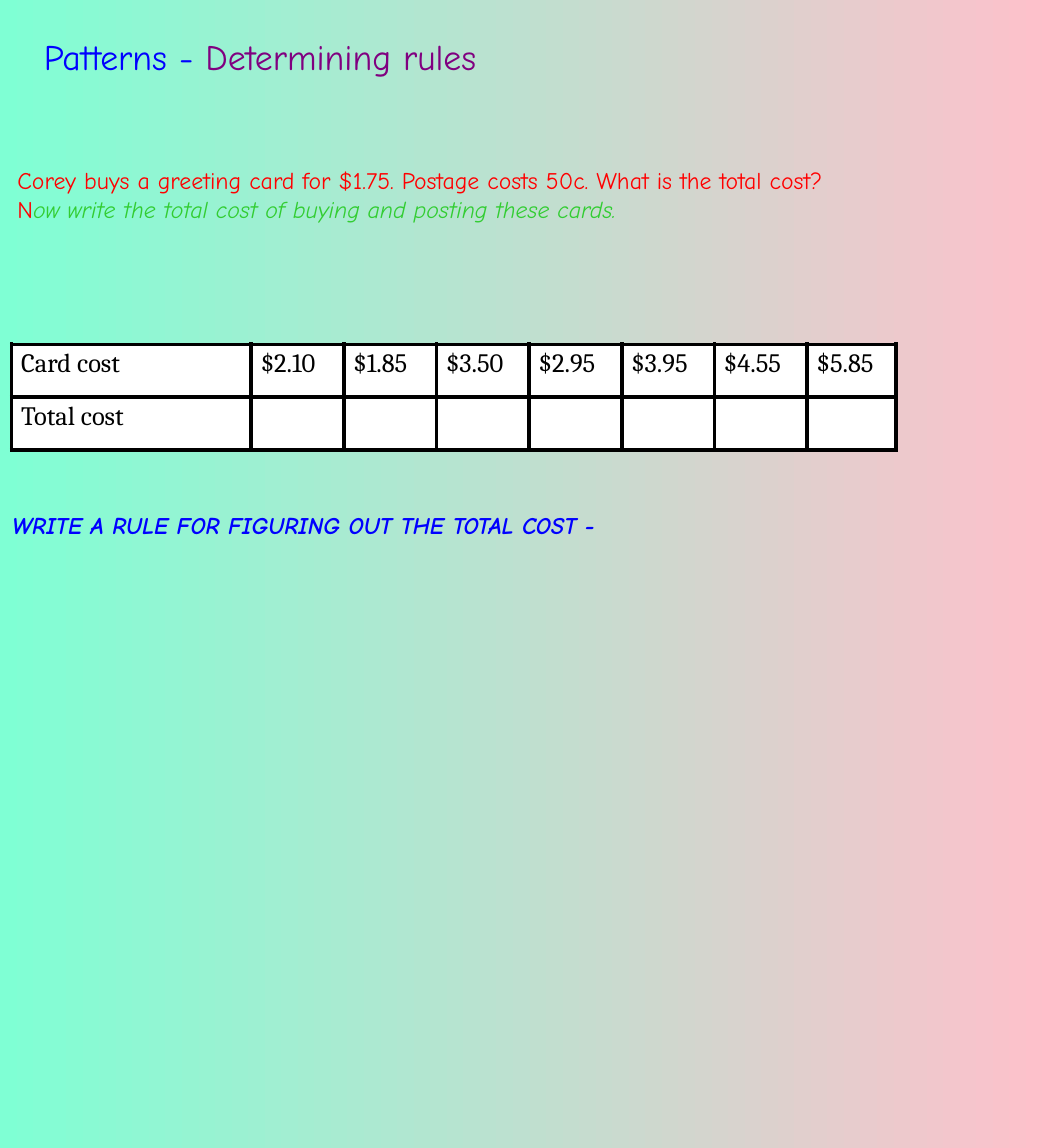
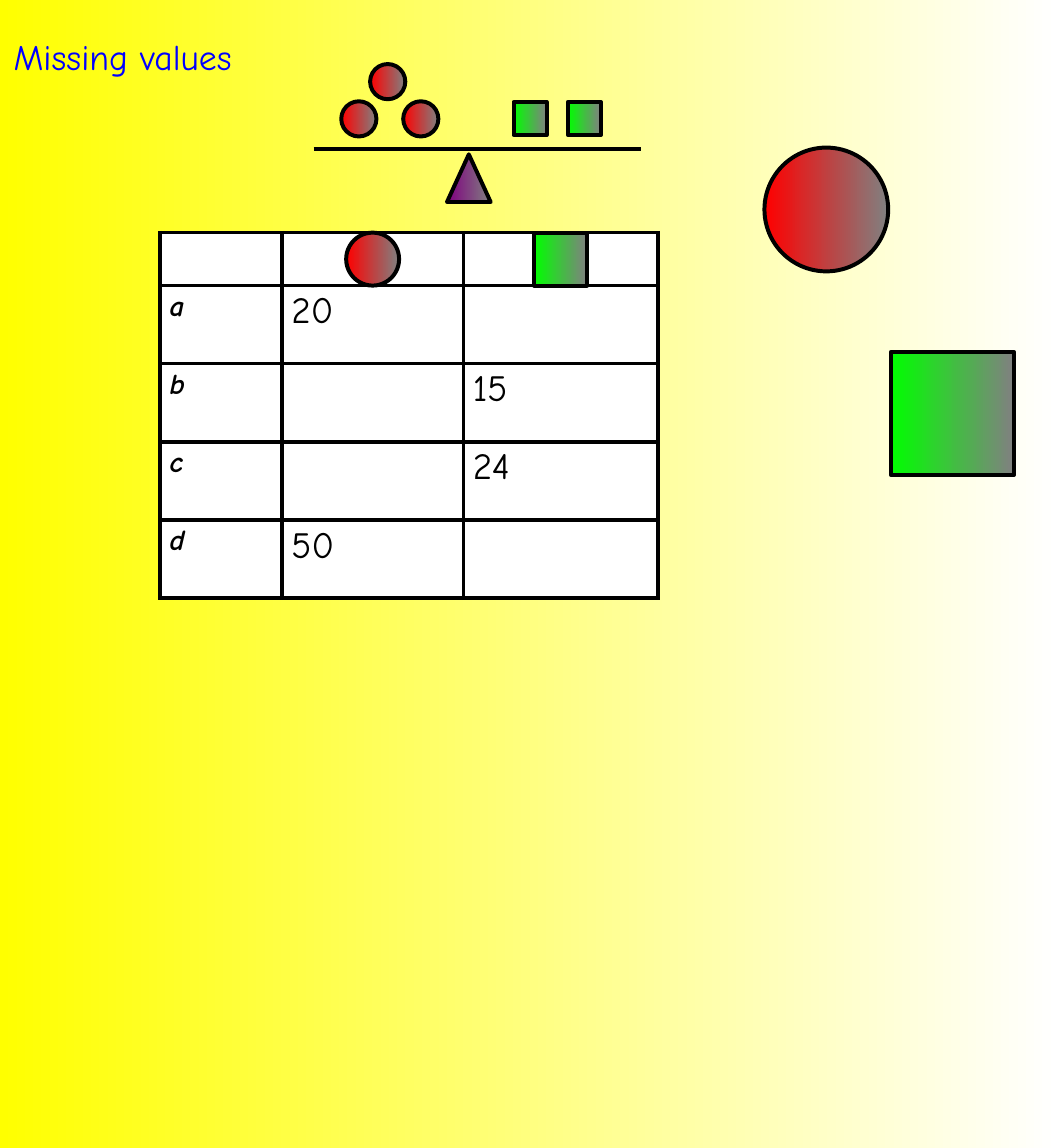
from lxml.etree import SubElement
from pptx import Presentation
from pptx.dml.color import RGBColor
from pptx.enum.shapes import MSO_CONNECTOR, MSO_SHAPE
from pptx.enum.text import MSO_ANCHOR, MSO_AUTO_SIZE, PP_ALIGN
from pptx.oxml.ns import qn
from pptx.util import Pt

BLACK, WHITE, GREY = "000000", "FFFFFF", "808080"
BLUE, PURPLE, RED = "0000FF", "800080", "FF0000"
GREEN, LIME = "32CD32", "00FF00"
COMIC, SERIF = "Comic Neue", "Cambria"
LINE_WIDTH = 3
TITLE_SIZE, BODY_SIZE = 27, 18
CIRCLE = (MSO_SHAPE.OVAL, RED)
SQUARE = (MSO_SHAPE.RECTANGLE, LIME)
PIVOT = (MSO_SHAPE.ISOSCELES_TRIANGLE, PURPLE)


def color(value):
    """Turn a hex string into a colour."""
    return RGBColor.from_string(value)


def fill_gradient(fill, start, end):
    """Fill from left to right between two colours."""
    fill.gradient()
    fill.gradient_angle = 0
    for stop, value in zip(fill.gradient_stops, (start, end)):
        stop.color.rgb = color(value)


def add_run(paragraph, text, size, value, font=COMIC, bold=False, italic=False):
    """Add one formatted run to a paragraph."""
    run = paragraph.add_run()
    run.text = text
    run.font.name, run.font.size = font, Pt(size)
    run.font.bold, run.font.italic = bold, italic
    run.font.color.rgb = color(value)


def add_slide(presentation, background, left, width, title_runs):
    """Add a slide with a gradient background and a title of (text, colour) runs."""
    slide = presentation.slides.add_slide(presentation.slide_layouts[5])
    fill_gradient(slide.background.fill, *background)
    title = slide.shapes.title
    title.left, title.top, title.width, title.height = (
        Pt(value) for value in (left, 23, width, 40))
    frame = title.text_frame
    frame.auto_size = MSO_AUTO_SIZE.NONE
    frame.vertical_anchor = MSO_ANCHOR.TOP
    paragraph = frame.paragraphs[0]
    paragraph.alignment = PP_ALIGN.LEFT
    for text, value in title_runs:
        add_run(paragraph, text, TITLE_SIZE, value)
    return slide


def add_text(slide, left, top, width, height, lines):
    """Add a text box; each line is a list of (text, colour, style) runs."""
    box = slide.shapes.add_textbox(Pt(left), Pt(top), Pt(width), Pt(height))
    frame = box.text_frame
    frame.word_wrap = True
    for index, runs in enumerate(lines):
        paragraph = frame.add_paragraph() if index else frame.paragraphs[0]
        for text, value, style in runs:
            add_run(paragraph, text, BODY_SIZE, value, **style)


def add_borders(cell):
    """Draw a black border on all four sides of a cell."""
    properties = cell._tc.get_or_add_tcPr()
    for side in ("a:lnL", "a:lnR", "a:lnT", "a:lnB"):
        line = SubElement(properties, qn(side), w=str(Pt(LINE_WIDTH)))
        SubElement(SubElement(line, qn("a:solidFill")), qn("a:srgbClr"), val=BLACK)


def add_grid(slide, left, top, columns, rows, texts, style, label_style):
    """Add a white table whose first column has its own text style."""
    table = slide.shapes.add_table(
        len(rows), len(columns), Pt(left), Pt(top), Pt(sum(columns)), Pt(sum(rows))).table
    table.first_row = table.horz_banding = False
    for column, width in zip(table.columns, columns):
        column.width = Pt(width)
    for row, height, row_texts in zip(table.rows, rows, texts):
        row.height = Pt(height)
        for index, (cell, text) in enumerate(zip(row.cells, row_texts)):
            add_borders(cell)
            cell.fill.solid()
            cell.fill.fore_color.rgb = color(WHITE)
            if text:
                cell_style = style if index else label_style
                add_run(cell.text_frame.paragraphs[0], text, value=BLACK, **cell_style)


def add_symbol(slide, symbol, left, top, width, height=None):
    """Add an outlined shape that fades to grey; it is as high as wide by default."""
    preset, value = symbol
    shape = slide.shapes.add_shape(
        preset, Pt(left), Pt(top), Pt(width), Pt(height or width))
    shape.shadow.inherit = False
    fill_gradient(shape.fill, value, GREY)
    shape.line.color.rgb = color(BLACK)
    shape.line.width = Pt(LINE_WIDTH)


def add_beam(slide, left, right, top):
    """Add the horizontal beam of the balance."""
    beam = slide.shapes.add_connector(
        MSO_CONNECTOR.STRAIGHT, Pt(left), Pt(top), Pt(right), Pt(top))
    beam.line.color.rgb = color(BLACK)
    beam.line.width = Pt(LINE_WIDTH)
    SubElement(beam._element.spPr, qn("a:effectLst"))


def build_rules(presentation):
    """Build the slide on determining rules."""
    slide = add_slide(presentation, ("7FFFD4", "FFC0CB"), 26, 510,
                      [("Patterns - ", BLUE), ("Determining rules", PURPLE)])
    prices = ["$2.10", "$1.85", "$3.50", "$2.95", "$3.95", "$4.55", "$5.85"]
    texts = [["Card cost"] + prices, ["Total cost"] + [""] * len(prices)]
    style = {"size": 20, "font": SERIF}
    add_grid(slide, 8.8, 260, [181] + [70] * 6 + [67], [40, 40], texts, style, style)
    question = ("Corey buys a greeting card for $1.75. Postage costs 50c. "
                "What is the total cost?")
    task = "ow write the total cost of buying and posting these cards."
    add_text(slide, 6, 121.7, 788, 51, [
        [(question, RED, {})],
        [("N", RED, {}), (task, GREEN, {"italic": True})]])
    add_text(slide, 2, 382, 734, 29, [
        [("WRITE A RULE FOR FIGURING OUT THE TOTAL COST -", BLUE,
          {"bold": True, "italic": True})]])


def build_balance(slide):
    """Draw three circles balancing two squares."""
    add_beam(slide, 237, 484, 112.3)
    add_symbol(slide, PIVOT, 337.7, 116.6, 33, 36)
    for left, top in ((257.8, 76.5), (304.6, 76.5), (279.6, 48.4)):
        add_symbol(slide, CIRCLE, left, top, 26.6)
    for left in (388, 429):
        add_symbol(slide, SQUARE, left, 77, 25)


def build_values(presentation):
    """Build the slide on missing values."""
    slide = add_slide(presentation, ("FFFF00", WHITE), 3, 286,
                      [("Missing values", BLUE)])
    build_balance(slide)
    left, top, columns, header = 121, 175.7, [92, 137, 147], 40
    texts = [["", "", ""], ["a", "20", ""], ["b", "", "15"],
             ["c", "", "24"], ["d", "50", ""]]
    add_grid(slide, left, top, columns, [header] + [59] * 4, texts,
             {"size": 28}, {"size": 22, "bold": True, "italic": True})
    for index, symbol in enumerate((CIRCLE, SQUARE), 1):
        center = left + sum(columns[:index]) + columns[index] / 2
        add_symbol(slide, symbol, center - header / 2, top, header)
    add_symbol(slide, CIRCLE, 577.5, 111.5, 93.5)
    add_symbol(slide, SQUARE, 673, 265.7, 93)


def main():
    """Build and save the presentation."""
    presentation = Presentation()
    presentation.slide_width, presentation.slide_height = Pt(800), Pt(867)
    build_rules(presentation)
    build_values(presentation)
    presentation.save("out.pptx")


if __name__ == "__main__":
    main()
